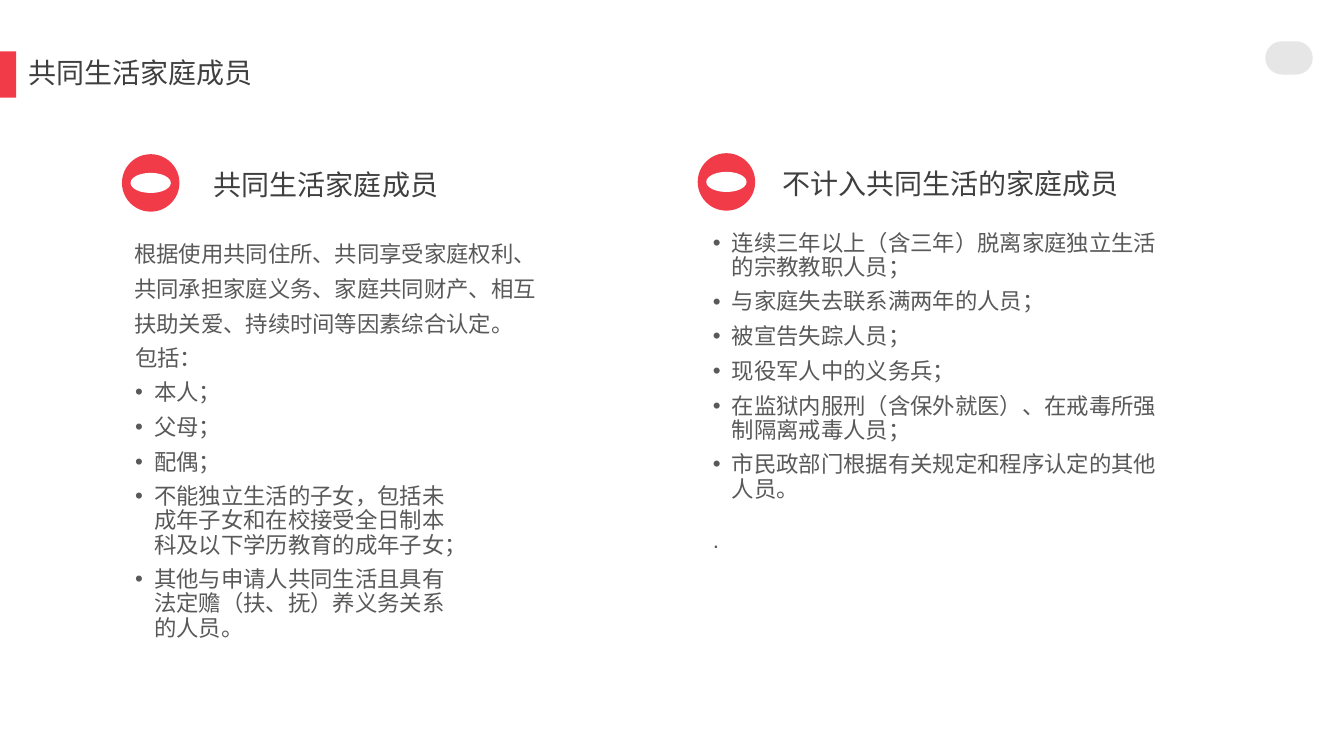
from dataclasses import dataclass

from lxml import etree
from pptx import Presentation
from pptx.dml.color import RGBColor
from pptx.enum.shapes import MSO_SHAPE
from pptx.enum.text import MSO_ANCHOR, MSO_AUTO_SIZE, PP_ALIGN
from pptx.oxml.ns import qn
from pptx.util import Inches, Pt

RECTANGLE, ROUNDED, OVAL = MSO_SHAPE.RECTANGLE, MSO_SHAPE.ROUNDED_RECTANGLE, MSO_SHAPE.OVAL
TOP, MIDDLE = MSO_ANCHOR.TOP, MSO_ANCHOR.MIDDLE
LEFT = PP_ALIGN.LEFT
NO_FIT = MSO_AUTO_SIZE.NONE

COLOURS = {"accent": "F23B48", "pill": "E7E6E6", "heading": "3F3F3F",
           "body": "595959", "symbol": "FFFFFF"}
LATIN, CHINESE = "Arial", "Noto Sans CJK SC"
HANG = Inches(0.19)
BADGE = 0.57
SYMBOL_WIDTH, SYMBOL_HEIGHT = 0.4, 0.2

Box = tuple[float, float, float, float]


@dataclass
class Line:
    text: str
    bullet: bool = False
    spacing: float = 0.9
    before: float = 7.5


@dataclass
class TextBlock:
    box: Box
    lines: list[Line]
    size: int = 16
    colour: str = "body"


@dataclass
class Badge:
    left: float
    top: float


def bullets(*texts: str) -> list[Line]:
    return [Line(text, bullet=True) for text in texts]


BADGES = [Badge(1.21, 1.53), Badge(6.92, 1.52)]

BLOCKS = [
    TextBlock((2.12, 1.7, 2.44, 0.41), [Line("共同生活家庭成员")], 20, "heading"),
    TextBlock((7.76, 1.69, 3.36, 0.41), [Line("不计入共同生活的家庭成员")], 20, "heading"),
    TextBlock((1.33, 2.3, 4.19, 0.82), [
        Line("根据使用共同住所、共同享受家庭权利、共同承担家庭义务、家庭共同财产、"
             "相互扶助关爱、持续时间等因素综合认定。", spacing=1.3, before=0)]),
    TextBlock((1.34, 3.44, 3.11, 2.83), [Line("包括："), *bullets(
        "本人；",
        "父母；",
        "配偶；",
        "不能独立生活的子女，包括未成年子女和在校接受全日制本科及以下学历教育的成年子女；",
        "其他与申请人共同生活且具有法定赡（扶、抚）养义务关系的人员。")]),
    TextBlock((7.07, 2.3, 4.46, 2.83), [*bullets(
        "连续三年以上（含三年）脱离家庭独立生活的宗教教职人员；",
        "与家庭失去联系满两年的人员；",
        "被宣告失踪人员；",
        "现役军人中的义务兵；",
        "在监狱内服刑（含保外就医）、在戒毒所强制隔离戒毒人员；",
        "市民政部门根据有关规定和程序认定的其他人员。"), Line(".", spacing=1.5)]),
]


def add_filled(page, kind, box: Box, colour: str):
    shape = page.shapes.add_shape(kind, *map(Inches, box))
    shape.shadow.inherit = False
    shape.fill.solid()
    shape.fill.fore_color.rgb = RGBColor.from_string(COLOURS[colour])
    shape.line.fill.background()
    return shape


def add_bullet(para) -> None:
    properties = para._p.get_or_add_pPr()
    properties.set("marL", str(HANG))
    properties.set("indent", str(-HANG))
    etree.SubElement(properties, qn("a:buFont")).set("typeface", LATIN)
    etree.SubElement(properties, qn("a:buChar")).set("char", "•")


def write_line(para, line: Line, size: int, colour: str, font: str) -> None:
    para_format = {"alignment": LEFT, "line_spacing": line.spacing,
                   "space_before": Pt(line.before)}
    for name, value in para_format.items():
        setattr(para, name, value)
    if line.bullet:
        add_bullet(para)
    span = para.add_run()
    span.text = line.text
    for name, value in {"size": Pt(size), "name": font, "bold": False}.items():
        setattr(span.font, name, value)
    span.font.color.rgb = RGBColor.from_string(COLOURS[colour])
    east_asian = etree.SubElement(span._r.get_or_add_rPr(), qn("a:ea"))
    east_asian.set("typeface", CHINESE)


def fill_frame(frame, block: TextBlock, anchor=TOP, font: str = LATIN) -> None:
    frame_format = {"word_wrap": True, "auto_size": NO_FIT, "vertical_anchor": anchor,
                    "margin_left": 0, "margin_right": 0, "margin_top": 0, "margin_bottom": 0}
    for name, value in frame_format.items():
        setattr(frame, name, value)
    for index, line in enumerate(block.lines):
        para = frame.add_paragraph() if index else frame.paragraphs[0]
        write_line(para, line, block.size, block.colour, font)


def set_title(page) -> None:
    block = TextBlock((0.28, 0.51, 4.17, 0.46), [Line("共同生活家庭成员", before=10)],
                      20, "heading")
    title = page.shapes.title
    for name, value in zip(("left", "top", "width", "height"), block.box):
        setattr(title, name, Inches(value))
    fill_frame(title.text_frame, block, MIDDLE, CHINESE)


def add_badge(page, badge: Badge) -> None:
    """Draw a red disc with a plain white symbol at its centre."""
    add_filled(page, OVAL, (badge.left, badge.top, BADGE, BADGE), "accent")
    symbol_left = badge.left + (BADGE - SYMBOL_WIDTH) / 2
    symbol_top = badge.top + (BADGE - SYMBOL_HEIGHT) / 2
    add_filled(page, OVAL, (symbol_left, symbol_top, SYMBOL_WIDTH, SYMBOL_HEIGHT), "symbol")


def main() -> None:
    deck = Presentation()
    deck.slide_width, deck.slide_height = Inches(13.33), Inches(7.5)
    page = deck.slides.add_slide(deck.slide_layouts.get_by_name("Title Only"))

    add_filled(page, RECTANGLE, (0, 0.51, 0.16, 0.46), "accent")
    pill = add_filled(page, ROUNDED, (12.55, 0.41, 0.47, 0.33), "pill")
    pill.adjustments[0] = 0.5
    set_title(page)
    for badge in BADGES:
        add_badge(page, badge)
    for block in BLOCKS:
        text_box = page.shapes.add_textbox(*map(Inches, block.box))
        fill_frame(text_box.text_frame, block)

    deck.save("out.pptx")


if __name__ == "__main__":
    main()
